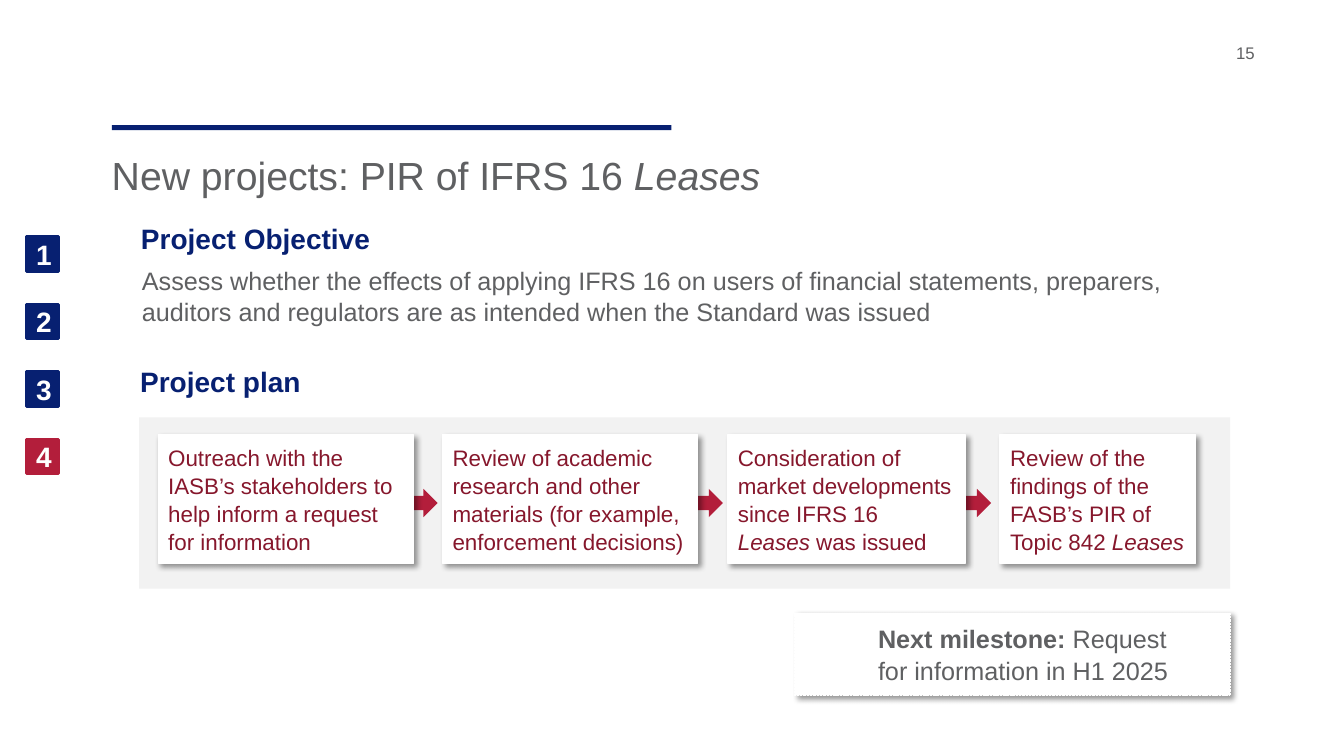
from lxml import etree
from pptx import Presentation
from pptx.dml.color import RGBColor
from pptx.enum.dml import MSO_LINE
from pptx.enum.shapes import MSO_SHAPE as Shape
from pptx.enum.text import MSO_ANCHOR as Anchor, PP_ALIGN as Align
from pptx.oxml import parse_xml
from pptx.util import Inches, Pt

COLORS = {
    "navy": "072071", "red": "B31E3B", "wine": "86172C",
    "gray": "5F6062", "panel": "F2F2F2", "white": "FFFFFF",
}
SHADOW = (
    '<a:effectLst xmlns:a="http://schemas.openxmlformats.org/drawingml/2006/main">'
    '<a:outerShdw blurRad="50800" dist="38100" dir="2700000" algn="tl" rotWithShape="0">'
    '<a:srgbClr val="000000"><a:alpha val="40000"/></a:srgbClr>'
    '</a:outerShdw></a:effectLst>'
)

deck = Presentation()
deck.slide_width, deck.slide_height = Inches(13.33), Inches(7.5)
page = deck.slides.add_slide(deck.slide_layouts[6])


def add_block(kind, left, top, width, height, fill, line_width=0, shadow=False):
    block = page.shapes.add_shape(
        kind, Inches(left), Inches(top), Inches(width), Inches(height))
    block.shadow.inherit = False
    block.fill.solid()
    block.fill.fore_color.rgb = RGBColor.from_string(COLORS[fill])
    if line_width:
        block.line.color.rgb = RGBColor.from_string(COLORS[fill])
        block.line.width = Pt(line_width)
    else:
        block.line.fill.background()
    if shadow:
        effects = block._element.spPr.find(
            "{http://schemas.openxmlformats.org/drawingml/2006/main}effectLst")
        effects.getparent().replace(effects, parse_xml(SHADOW))
    return block


def write(para, spans, size, color, bold=None, spacing=1.05):
    para.line_spacing = spacing
    para.font.name = "Arial"
    para.font.size = Pt(size)
    para.font.bold = bold
    para.font.color.rgb = RGBColor.from_string(COLORS[color])
    for text, style in spans:
        span = para.add_run()
        span.text = text
        if style == "italic":
            span.font.italic = True
        if style == "bold":
            span.font.bold = True


add_block(Shape.RECTANGLE, 1.11, 1.24, 5.55, 0.05, "navy")
milestone = add_block(Shape.RECTANGLE, 7.88, 6.08, 4.32, 0.82, "white", 0.25, True)
milestone.line.dash_style = MSO_LINE.SQUARE_DOT
add_block(Shape.RECTANGLE, 1.38, 4.14, 10.82, 1.7, "panel")

texts = [
    (12.26, 0.41, 0.67, 0.29, 0, [("15", "")], 12, "gray", None),
    (1.01, 1.43, 11.12, 0.57, 0.1,
     [("New projects: PIR of IFRS 16 ", ""), ("Leases", "italic")], 28, "gray", None),
    (1.3, 2.13, 10.67, 1.23, 0.1, [("Project Objective", "")], 20, "navy", True),
    (1.39, 3.6, 10.37, 0.4, 0, [("Project plan", "")], 20, "navy", True),
    (8.61, 6.12, 3.38, 0.71, 0.1,
     [("Next milestone: ", "bold"), ("Request for information in H1 2025", "")],
     18, "gray", None),
]
for left, top, width, height, inset, spans, size, color, bold in texts:
    box = page.shapes.add_textbox(Inches(left), Inches(top), Inches(width), Inches(height))
    frame = box.text_frame
    frame.word_wrap = True
    frame.margin_left = frame.margin_right = Inches(inset)
    frame.margin_top = frame.margin_bottom = Inches(inset / 2)
    write(frame.paragraphs[0], spans, size, color, bold)
    if spans[0][0] == "Project Objective":
        para = frame.add_paragraph()
        para.space_before = para.space_after = Pt(6)
        para._p.get_or_add_pPr().set("marL", str(Inches(0.01)))
        write(para, [(
            "Assess whether the effects of applying IFRS 16 on users of financial "
            "statements, preparers, auditors and regulators are as intended when "
            "the Standard was issued", "")], 18, "gray")

for left in (3.86, 6.69, 9.35):
    add_block(Shape.RIGHT_ARROW, left, 4.85, 0.48, 0.28, "red")

steps = [
    (1.57, 2.53, [("Outreach with the IASB’s stakeholders to help inform a request "
                   "for information", "")]),
    (4.39, 2.53, [("Review of academic research and other materials (for example, "
                   "enforcement decisions)", "")]),
    (7.22, 2.35, [("Consideration of market developments since IFRS 16 ", ""),
                  ("Leases", "italic"), (" was issued", "")]),
    (9.92, 1.94, [("Review of the findings of the FASB’s PIR of Topic 842 ", ""),
                  ("Leases", "italic")]),
]
for left, width, spans in steps:
    step = add_block(Shape.RECTANGLE, left, 4.31, width, 1.28, "white", 1, True)
    step.text_frame.word_wrap = True
    step.text_frame.vertical_anchor = Anchor.MIDDLE
    para = step.text_frame.paragraphs[0]
    para.alignment = Align.LEFT
    write(para, spans, 16, "wine")

for index, fill in enumerate(["navy", "navy", "navy", "red"]):
    marker = add_block(Shape.RECTANGLE, 0.26, 2.35 + 0.67 * index, 0.32, 0.34, fill, 2.25)
    marker.text_frame.vertical_anchor = Anchor.MIDDLE
    para = marker.text_frame.paragraphs[0]
    para.alignment = Align.CENTER
    write(para, [(str(index + 1), "")], 20, "white", True, 1.0)

deck.save("out.pptx")
